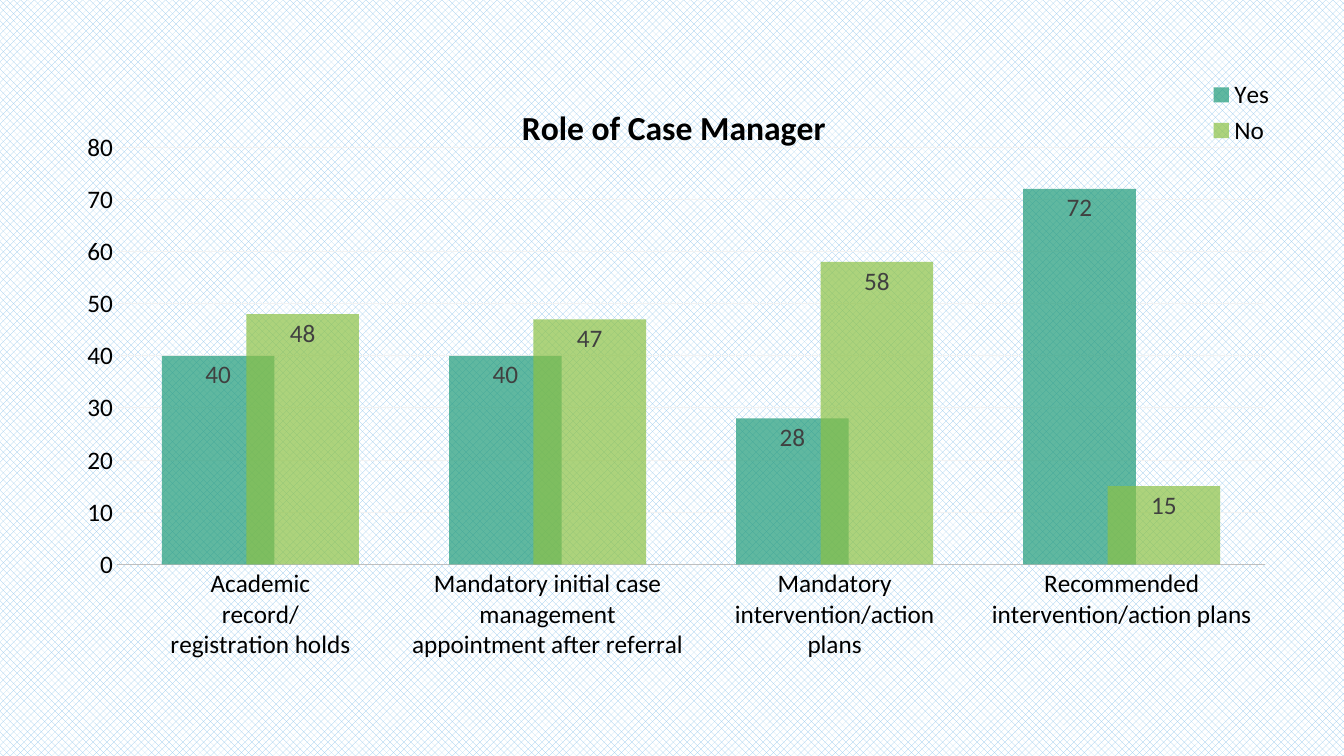
from lxml import etree
from pptx import Presentation, util as u
from pptx.chart.data import CategoryChartData
from pptx.dml.color import RGBColor
from pptx.enum import chart as ch, dml
from pptx.oxml.ns import qn

COLORS = {
    "text": "000000", "label": "404040", "axis": "BFBFBF", "grid": "F2F2F2",
    "hatch": "94C8ED", "paper": "FFFFFF", "Yes": "1D9A78", "No": "8BC145",
}
ANSWERS = {"Yes": (40, 40, 28, 72), "No": (48, 47, 58, 15)}
CATEGORIES = (
    "Academic record/registration holds",
    "Mandatory initial case management appointment after referral",
    "Mandatory intervention/action plans",
    "Recommended intervention/action plans",
)


def style_font(font, color="text", size=18, bold=False):
    font.name, font.size, font.bold = "Calibri", u.Pt(size), bold
    font.color.rgb = RGBColor.from_string(COLORS[color])


def set_layout(parent, **settings):
    """Place a chart part by hand, in shares of the chart's size."""
    layout = parent.find(qn("c:layout"))
    if layout is None:
        layout = etree.Element(qn("c:layout"))
        parent.insert(0, layout)
    manual = etree.SubElement(layout, qn("c:manualLayout"))
    for name, value in settings.items():
        etree.SubElement(manual, qn(f"c:{name}")).set("val", str(value))


presentation = Presentation()
presentation.slide_width = u.Inches(13.33)
presentation.slide_height = u.Inches(7.5)
slide = presentation.slides.add_slide(presentation.slide_layouts[6])

background = slide.background.fill
background.patterned()
background.pattern = dml.MSO_PATTERN.PERCENT_50
background.fore_color.rgb = RGBColor.from_string(COLORS["hatch"])
background.back_color.rgb = RGBColor.from_string(COLORS["paper"])

# Chart with its title and legend
data = CategoryChartData()
data.categories = CATEGORIES
for answer, values in ANSWERS.items():
    data.add_series(answer, values)
chart = slide.shapes.add_chart(
    ch.XL_CHART_TYPE.COLUMN_CLUSTERED,
    u.Inches(0.68), u.Inches(0.74), u.Inches(11.99), u.Inches(6), data,
).chart
style_font(chart.font)

title = chart.chart_title.text_frame.paragraphs[0]
title.text = "Role of Case Manager"
style_font(title.font, size=24, bold=True)
set_layout(chart.chart_title._element, xMode="edge", yMode="edge", x=0.37, y=0.04)

chart.has_legend = True
chart.legend.position = ch.XL_LEGEND_POSITION.CORNER
chart.legend.include_in_layout = True
style_font(chart.legend.font)

# Axes
category_axis, value_axis = chart.category_axis, chart.value_axis
for axis in (category_axis, value_axis):
    axis.major_tick_mark = axis.minor_tick_mark = ch.XL_TICK_MARK.NONE
    style_font(axis.tick_labels.font)
category_axis.format.line.color.rgb = RGBColor.from_string(COLORS["axis"])
category_axis.format.line.width = u.Pt(1.25)
value_axis.minimum_scale, value_axis.maximum_scale = 0, 80
value_axis.major_unit = 10
value_axis.format.line.fill.background()
gridline = value_axis.major_gridlines.format.line
gridline.color.rgb = RGBColor.from_string(COLORS["grid"])
gridline.width = u.Pt(0.75)

# Overlapping, see-through columns
plot = chart.plots[0]
plot.vary_by_categories = False
plot.gap_width, plot.overlap = 80, 25
set_layout(
    chart._chartSpace.chart.plotArea, layoutTarget="inner",
    xMode="edge", yMode="edge", x=0.04, y=0.12, w=0.95, h=0.69,
)
for series in plot.series:
    fill = series.format.fill
    fill.solid()
    fill.fore_color.rgb = RGBColor.from_string(COLORS[series.name])
    color = series._element.find(qn("c:spPr")).find(f".//{qn('a:srgbClr')}")
    etree.SubElement(color, qn("a:alpha")).set("val", "70000")
    labels = series.data_labels
    labels.show_value = True
    labels.position = ch.XL_LABEL_POSITION.INSIDE_END
    style_font(labels.font, "label")

presentation.save("out.pptx")
